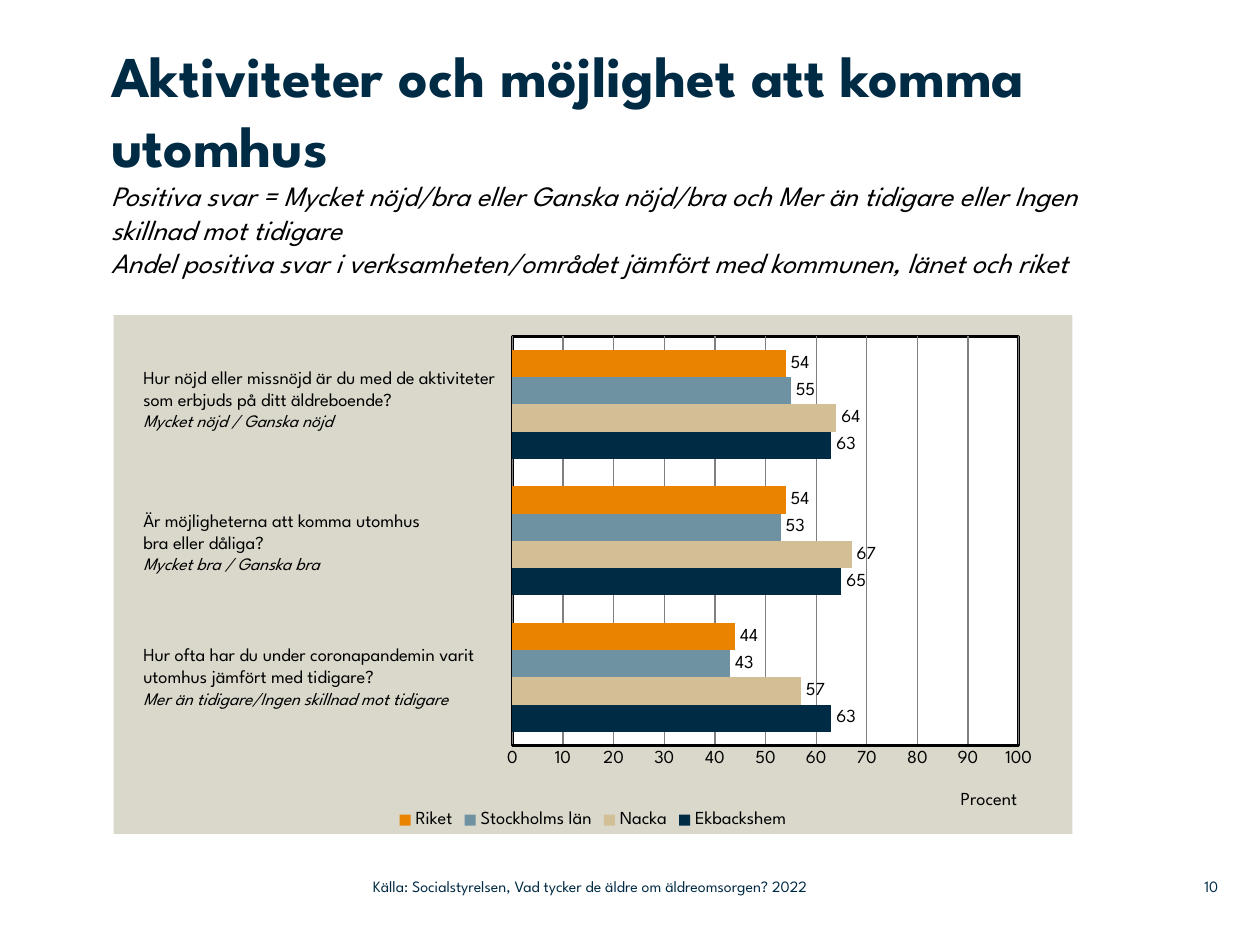
from lxml import etree
from pptx import Presentation
from pptx.chart.data import CategoryChartData
from pptx.dml.color import RGBColor
from pptx.enum.chart import XL_CHART_TYPE as CT, XL_LABEL_POSITION as LP
from pptx.enum.chart import XL_LEGEND_POSITION as LEG, XL_TICK_MARK as TM
from pptx.enum.text import MSO_ANCHOR as MA, PP_ALIGN as AL
from pptx.oxml import parse_xml
from pptx.oxml.ns import nsdecls, qn
from pptx.util import Cm, Pt

FONT = "League Spartan"
COLORS = {
    "navy": "002B45", "black": "000000", "white": "FFFFFF", "panel": "DAD7CB",
    "sand": "D3BF96", "steel": "6F92A2", "orange": "E98300", "grid": "808080",
}
SERIES = [
    ("Ekbackshem", (63, 65, 63), "navy"),
    ("Nacka", (57, 67, 64), "sand"),
    ("Stockholms län", (43, 53, 55), "steel"),
    ("Riket", (44, 54, 54), "orange"),
]
QUESTIONS = [
    (7.26, ["Hur nöjd eller missnöjd är du med de aktiviteter som erbjuds på ditt äldreboende?"],
     "Mycket nöjd / Ganska nöjd"),
    (10.13, ["Är möjligheterna att komma utomhus", "bra eller dåliga?"],
     "Mycket bra / Ganska bra"),
    (12.85, ["Hur ofta har du under coronapandemin varit utomhus jämfört med tidigare?"],
     "Mer än tidigare/Ingen skillnad mot tidigare"),
]


def rgb(name):
    return RGBColor.from_string(COLORS[name])


def style_font(font, size, color="black", bold=False, italic=False):
    font.name = FONT
    font.size = Pt(size)
    font.bold = bold
    font.italic = italic
    font.color.rgb = rgb(color)


def add_text(slide, box, lines, inset=None, anchor=MA.TOP, align=AL.LEFT):
    tf = slide.shapes.add_textbox(*(Cm(v) for v in box)).text_frame
    tf.word_wrap = True
    tf.vertical_anchor = anchor
    if inset is not None:
        tf.margin_left = tf.margin_right = tf.margin_top = tf.margin_bottom = Cm(inset)
    for i, (text, fmt) in enumerate(lines):
        p = tf.paragraphs[0] if i == 0 else tf.add_paragraph()
        p.alignment = align
        r = p.add_run()
        r.text = text
        style_font(r.font, **fmt)


def area_format(fill, line=None, width=0):
    outline = (f'<a:ln w="{Pt(width)}"><a:solidFill><a:srgbClr val="{COLORS[line]}"/>'
               '</a:solidFill></a:ln>' if line else '<a:ln><a:noFill/></a:ln>')
    return parse_xml(f'<c:spPr {nsdecls("c", "a")}><a:solidFill>'
                     f'<a:srgbClr val="{COLORS[fill]}"/></a:solidFill>{outline}</c:spPr>')


def set_layout(parent, index, **values):
    old = parent.find(qn("c:layout"))
    if old is not None:
        parent.remove(old)
    layout = etree.Element(qn("c:layout"))
    manual = etree.SubElement(layout, qn("c:manualLayout"))
    for tag, value in values.items():
        etree.SubElement(manual, qn(f"c:{tag}")).set("val", str(value))
    parent.insert(index, layout)


def format_value_axis(axis):
    axis.minimum_scale, axis.maximum_scale, axis.major_unit = 0, 100, 10
    axis.major_tick_mark = axis.minor_tick_mark = TM.NONE
    axis.format.line.color.rgb = rgb("black")
    axis.format.line.width = Pt(2)
    axis.has_major_gridlines = True
    axis.major_gridlines.format.line.color.rgb = rgb("grid")
    axis.major_gridlines.format.line.width = Pt(0.75)
    style_font(axis.tick_labels.font, 10.5)
    p = axis.axis_title.text_frame.paragraphs[0]
    r = p.add_run()
    r.text = "Procent"
    style_font(r.font, 10.5)
    title = axis._element.find(qn("c:title"))
    set_layout(title, 1, xMode="edge", yMode="edge", x=0.88, y=0.91)


def add_bar_chart(slide, box):
    data = CategoryChartData()
    data.categories = ["1", "2", "3"]
    for name, values, _ in SERIES:
        data.add_series(name, values)
    chart = slide.shapes.add_chart(CT.BAR_CLUSTERED, *(Cm(v) for v in box), data).chart
    style_font(chart.font, 10.5)
    chart.has_title = False
    chart.has_legend = True
    chart.legend.position = LEG.BOTTOM
    chart.legend.include_in_layout = False
    style_font(chart.legend.font, 10.5)
    chart.category_axis.visible = False
    format_value_axis(chart.value_axis)

    plot = chart.plots[0]
    plot.gap_width, plot.overlap = 100, 0
    plot.vary_by_categories = False
    for series, (_, _, color) in zip(plot.series, SERIES):
        series.format.fill.solid()
        series.format.fill.fore_color.rgb = rgb(color)
        labels = series.data_labels
        labels.show_value = True
        labels.position = LP.OUTSIDE_END
        style_font(labels.font, 10.5)

    frame = chart._chartSpace.find(qn("c:chart"))
    frame.addnext(area_format("panel"))
    area = frame.find(qn("c:plotArea"))
    area.append(area_format("white", "black", 2))
    set_layout(area, 0, layoutTarget="inner", xMode="edge", yMode="edge",
               x=0.416, y=0.041, w=0.528, h=0.789)


def main():
    prs = Presentation()
    prs.slide_width, prs.slide_height = Cm(25.4), Cm(19.05)
    s = prs.slides.add_slide(prs.slide_layouts[6])

    subtitle = dict(size=16, italic=True)
    add_text(s, (2.24, 0.81, 19.81, 4.8), [
        ("Aktiviteter och möjlighet att komma utomhus", dict(size=33, color="navy", bold=True)),
        ("Positiva svar = Mycket nöjd/bra eller Ganska nöjd/bra och Mer än tidigare "
         "eller Ingen skillnad mot tidigare", subtitle),
        ("Andel positiva svar i verksamheten/området jämfört med kommunen, länet och riket",
         subtitle),
    ], inset=0)

    add_bar_chart(s, (2.29, 6.35, 19.33, 10.46))

    for top, question, answer in QUESTIONS:
        lines = [(text, dict(size=10.5)) for text in question]
        lines.append((answer, dict(size=10, italic=True)))
        add_text(s, (2.64, top, 7.65, 2), lines)

    small = dict(size=9, color="navy")
    add_text(s, (7.52, 17.5, 11.25, 0.74),
             [("Källa: Socialstyrelsen, Vad tycker de äldre om äldreomsorgen? 2022", small)],
             inset=0, anchor=MA.MIDDLE)
    add_text(s, (23.37, 17.5, 1.19, 0.74), [("10", small)],
             inset=0, anchor=MA.MIDDLE, align=AL.RIGHT)
    prs.save("out.pptx")


if __name__ == "__main__":
    main()
